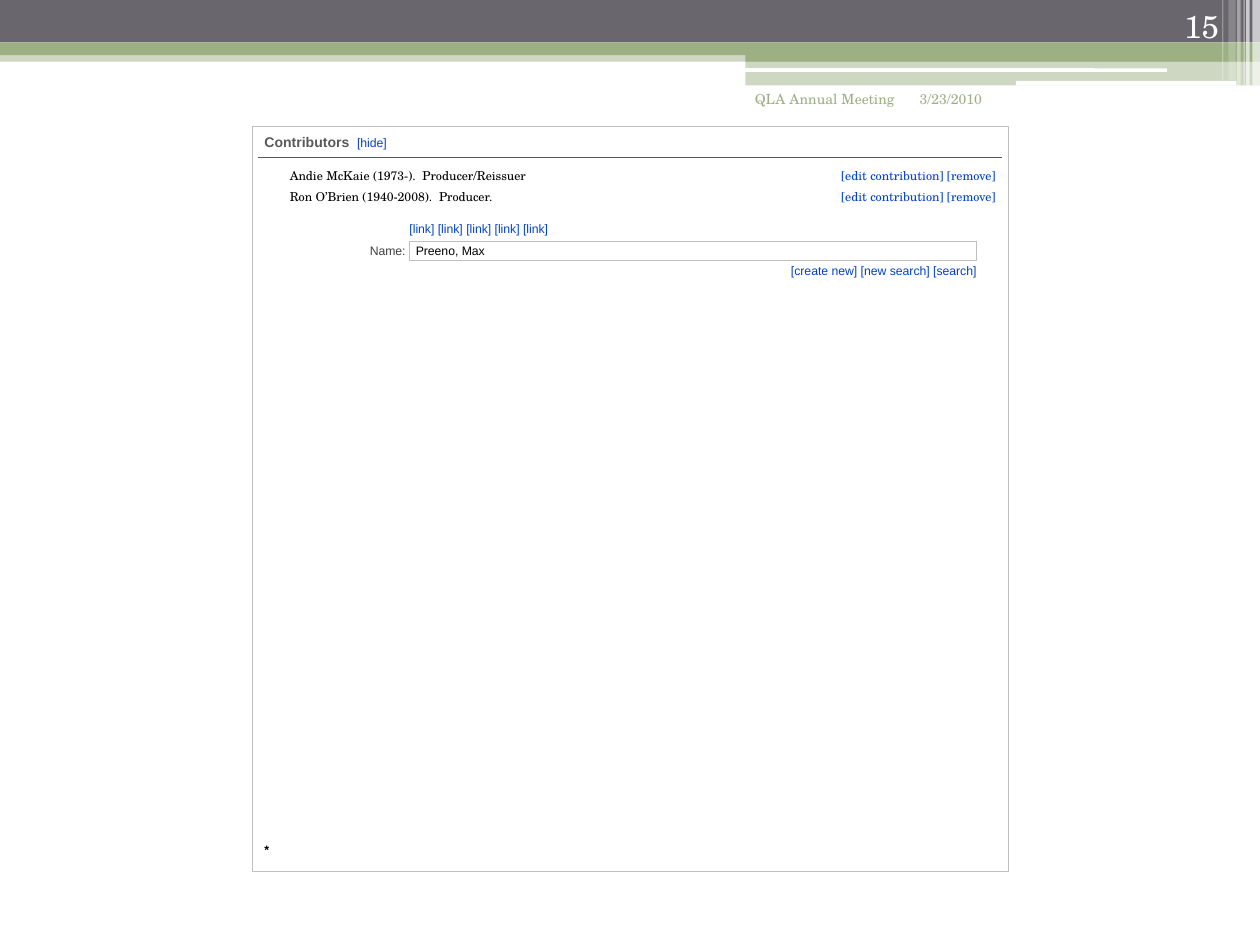
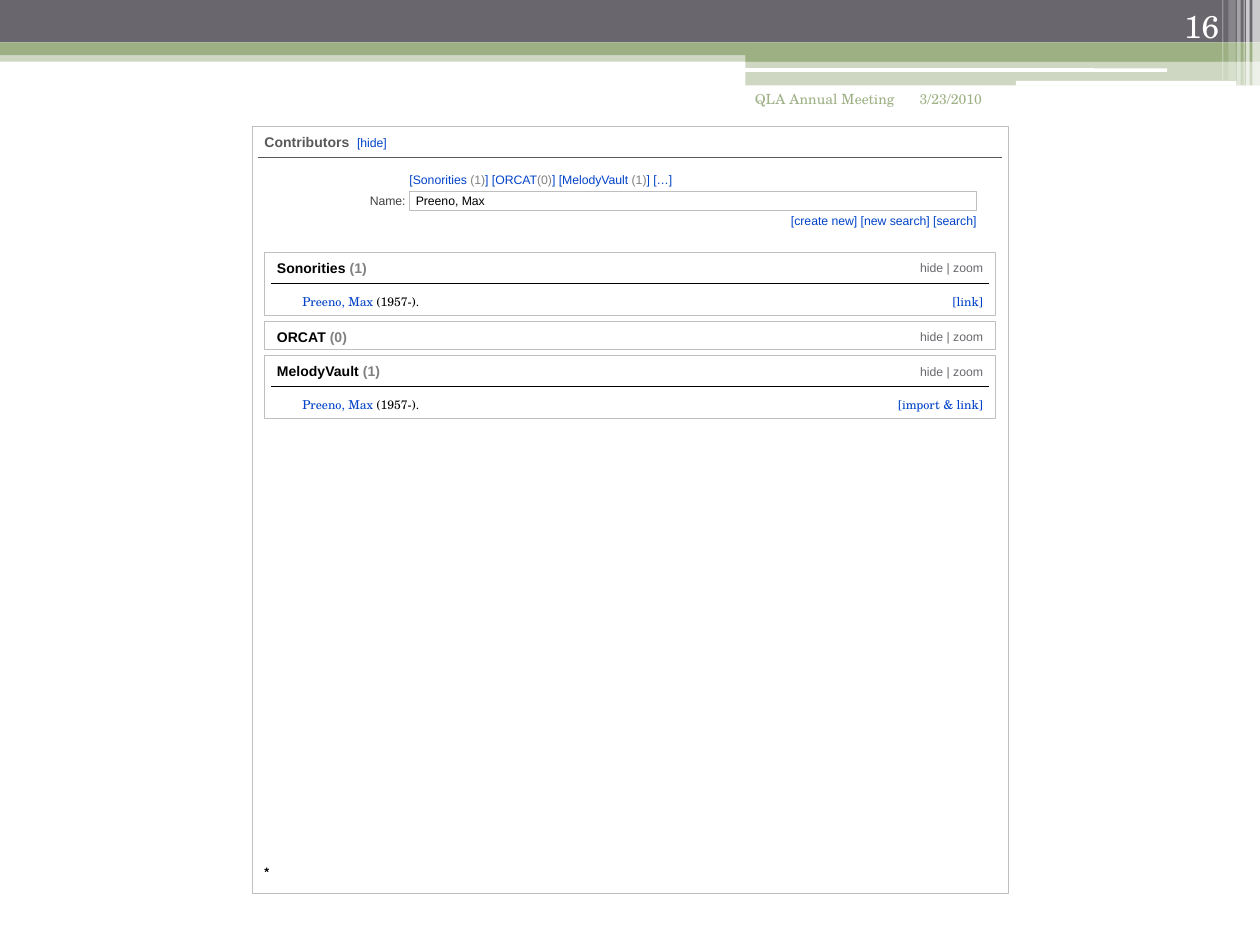
"""Build two slides of a contributor search form."""
from lxml import etree
from pptx import Presentation
from pptx.dml.color import RGBColor
from pptx.enum.shapes import MSO_CONNECTOR, MSO_SHAPE
from pptx.enum.text import MSO_ANCHOR, PP_ALIGN
from pptx.oxml.ns import qn
from pptx.util import Pt

RECTANGLE, ROUNDED = MSO_SHAPE.RECTANGLE, MSO_SHAPE.ROUNDED_RECTANGLE
STRAIGHT = MSO_CONNECTOR.STRAIGHT
TOP, MIDDLE, BOTTOM = MSO_ANCHOR.TOP, MSO_ANCHOR.MIDDLE, MSO_ANCHOR.BOTTOM
LEFT, RIGHT = PP_ALIGN.LEFT, PP_ALIGN.RIGHT

COLORS = {
    "band": "69676D",
    "accent": "9CB084",
    "white": "FFFFFF",
    "black": "000000",
    "heading": "595959",
    "label": "404040",
    "count": "808080",
    "border": "BFBFBF",
    "link": "0043C8",
}
SANS, SERIF = "Arial", "TeX Gyre Schola"
INSETS = (7.2, 3.6, 7.2, 3.6)
SLIDE_SIZE = (720, 540)
PANEL_LEFT, PANEL_TOP, PANEL_WIDTH = 144, 72, 432
HEADER_HEIGHT = 18
ROWS_OFFSET, ROW_HEIGHT = 24, 14
SECTION_GAP = 3.6
PERSON = "Preeno, Max"

BANDS = [
    (RECTANGLE, (0, 28.8, 720, 6.48), "accent", 50),
    (RECTANGLE, (0, 0, 720, 24.3), "band", 100),
    (RECTANGLE, (0, 24.3, 720, 7.2), "accent", 100),
    (RECTANGLE, (426, 28.1, 294, 7.2), "accent", 100),
    (RECTANGLE, (426, 35, 294, 13.9), "accent", 50),
    (ROUNDED, (425.5, 39, 241.5, 2), "white", 100),
    (ROUNDED, (580.5, 46.2, 126, 2.7), "white", 100),
]
STRIPES = [
    (715.7, 4.3, 48.9, 65),
    (712.1, 2, 48.9, 65),
    (710.6, 0.7, 48.9, 60),
    (707, 2, 48.9, 40),
    (702, 4.2, 46, 20),
    (698.4, 0.7, 46, 30),
]


def color(name):
    """Return the named colour."""
    return RGBColor.from_string(COLORS[name])


def add_box(slide, box, fill=None, line=None, opacity=100, kind=RECTANGLE):
    """Add a preset shape with an optional fill and thin outline."""
    shape = slide.shapes.add_shape(kind, *map(Pt, box))
    shape.shadow.inherit = False
    if fill:
        shape.fill.solid()
        shape.fill.fore_color.rgb = color(fill)
        if opacity < 100:
            node = shape._element.spPr.find(".//" + qn("a:srgbClr"))
            etree.SubElement(node, qn("a:alpha"), val=str(opacity * 1000))
    else:
        shape.fill.background()
    if line:
        shape.line.color.rgb = color(line)
        shape.line.width = Pt(0.25)
    else:
        shape.line.fill.background()
    return shape


def add_rule(slide, left, top, width, line):
    """Add a horizontal rule."""
    rule = slide.shapes.add_connector(STRAIGHT, Pt(left), Pt(top), Pt(left + width), Pt(top))
    rule.line.color.rgb = color(line)
    rule.line.width = Pt(0.75)
    etree.SubElement(rule._element.spPr, qn("a:effectLst"))


def write(shape, paragraphs, size=7, font=SANS, ink="black", bold=False,
          align=LEFT, anchor=MIDDLE, insets=INSETS, after=0):
    """Write paragraphs, each a string or a list of (text, ink) runs."""
    frame = shape.text_frame
    frame.word_wrap = True
    frame.vertical_anchor = anchor
    frame.margin_left, frame.margin_top, frame.margin_right, frame.margin_bottom = map(Pt, insets)
    for index, content in enumerate(paragraphs):
        paragraph = frame.add_paragraph() if index else frame.paragraphs[0]
        paragraph.alignment = align
        paragraph.space_after = Pt(after)
        runs = [(content, ink)] if isinstance(content, str) else content
        for text, run_ink in runs:
            run = paragraph.add_run()
            run.text = text
            run.font.name = font
            run.font.size = Pt(size)
            run.font.bold = bold
            run.font.color.rgb = color(run_ink)


def add_text(slide, box, paragraphs, **text_format):
    """Add a text box and write in it."""
    write(slide.shapes.add_textbox(*map(Pt, box)), paragraphs, **text_format)


def add_frame(slide, number):
    """Add the top bands, stripes, footer, date and slide number."""
    for kind, box, fill, opacity in BANDS:
        add_box(slide, box, fill, opacity=opacity, kind=kind)
    for left, width, height, opacity in STRIPES:
        add_box(slide, (left, 0, width, height), "white", opacity=opacity)
    footer = {"size": 8, "font": SERIF, "ink": "accent", "anchor": TOP}
    add_text(slide, (518.4, 48.3, 75.6, 36), ["3/23/2010"], **footer)
    add_text(slide, (414, 48.3, 104.4, 36), ["QLA Annual Meeting"], align=RIGHT, **footer)
    add_text(slide, (643.9, 0, 59.8, 29.2), [str(number)], size=18, font=SERIF,
             ink="white", align=RIGHT, anchor=BOTTOM)


def add_panel(slide, left, top, width, height):
    """Add the contributors panel with its heading and asterisk."""
    add_text(slide, (left, top, 60, HEADER_HEIGHT), ["Contributors"], size=8,
             ink="heading", bold=True, insets=(7.2, 3.6, 0, 3.6))
    add_text(slide, (left + 60, top, 40, HEADER_HEIGHT), ["[hide]"], ink="link",
             insets=(0, 4, 0, 3.2))
    add_rule(slide, left + 3.6, top + HEADER_HEIGHT, width - 7.2, "heading")
    panel = add_box(slide, (left, top, width, height), line="border")
    write(panel, ["*"], bold=True, anchor=BOTTOM, insets=(7.2, 3.6, 7.2, 8.2))


def add_rows(slide, left, top, width, entries, actions):
    """Add rows of entries below a header, with their actions on the right."""
    row_format = {"font": SERIF, "anchor": TOP, "after": 4}
    box = (left, top + ROWS_OFFSET, width, ROW_HEIGHT * len(entries))
    add_text(slide, box, entries, insets=(21.6, 0, 36, 0), **row_format)
    add_text(slide, box, actions, ink="link", align=RIGHT,
             insets=(width - 144, 0, 7.2, 0), **row_format)


def add_search_form(slide, left, top, width, links):
    """Add the source links, the name field and the search actions."""
    height, label_width = 10.8, 72
    field_top = top + 12.3
    actions = add_box(slide, (left, top + 23.7, width, height), "white")
    write(actions, ["[create new] [new search] [search]"], ink="link", align=RIGHT,
          insets=(label_width, 0.72, 0, 0.72))
    field = add_box(slide, (left + label_width, field_top, width - label_width, height),
                    "white", "border")
    write(field, [PERSON], insets=(3.6, 0.72, 3.6, 0.72))
    add_text(slide, (left, field_top, label_width, height), ["Name:"], ink="label",
             align=RIGHT, insets=(3.6, 0.72, 2.2, 0.72))
    link_bar = add_box(slide, (left, top, width, height), "white")
    write(link_bar, [links], ink="link", insets=(label_width, 0.72, 3.6, 0.72))


def add_section(slide, left, top, width, height, name, count, action):
    """Add one result section, with its row when it has an action."""
    header = (left, top, width, HEADER_HEIGHT)
    add_text(slide, header, [[(name + " ", "black"), (f"({count})", "count")]], size=8, bold=True)
    add_text(slide, header, ["hide | zoom"], ink="band", align=RIGHT)
    add_box(slide, (left, top, width, height), line="border")
    if action:
        add_rule(slide, left + 3.6, top + HEADER_HEIGHT, width - 7.2, "black")
        person = [(PERSON, "link"), (" (1957-).", "black")]
        add_rows(slide, left, top, width, [person], [action])


def build_contributors_slide(slide):
    """Build the slide that lists the contributors found so far."""
    add_frame(slide, 15)
    add_panel(slide, PANEL_LEFT, PANEL_TOP, PANEL_WIDTH, 425.8)
    entries = ["Andie McKaie (1973-).  Producer/Reissuer", "Ron O’Brien (1940-2008).  Producer."]
    add_rows(slide, PANEL_LEFT, PANEL_TOP, PANEL_WIDTH, entries,
             ["[edit contribution] [remove]"] * len(entries))
    add_search_form(slide, PANEL_LEFT + 18, 125.4, PANEL_WIDTH - 36, " ".join(["[link]"] * 5))


def build_results_slide(slide):
    """Build the slide that shows the search results by source."""
    add_frame(slide, 16)
    add_panel(slide, PANEL_LEFT, PANEL_TOP, PANEL_WIDTH, 438.5)
    sections = [
        ("Sonorities", 1, "[link]"),
        ("ORCAT", 0, None),
        ("MelodyVault", 1, "[import & link]"),
    ]
    top = 144
    for name, count, action in sections:
        height = 36 if action else 15.84
        add_section(slide, PANEL_LEFT + 7.2, top, PANEL_WIDTH - 14.4, height, name, count, action)
        top += height + SECTION_GAP
    links = [
        ("[Sonorities", "link"), (" (1)", "count"),
        ("] [ORCAT", "link"), ("(0)", "count"),
        ("] [MelodyVault", "link"), (" (1)", "count"),
        ("] […]", "link"),
    ]
    add_search_form(slide, PANEL_LEFT + 18, 97, PANEL_WIDTH - 36, links)


def main():
    """Build and save the presentation."""
    presentation = Presentation()
    presentation.slide_width, presentation.slide_height = map(Pt, SLIDE_SIZE)
    blank = presentation.slide_layouts[6]
    for build in (build_contributors_slide, build_results_slide):
        build(presentation.slides.add_slide(blank))
    presentation.save("out.pptx")


if __name__ == "__main__":
    main()
